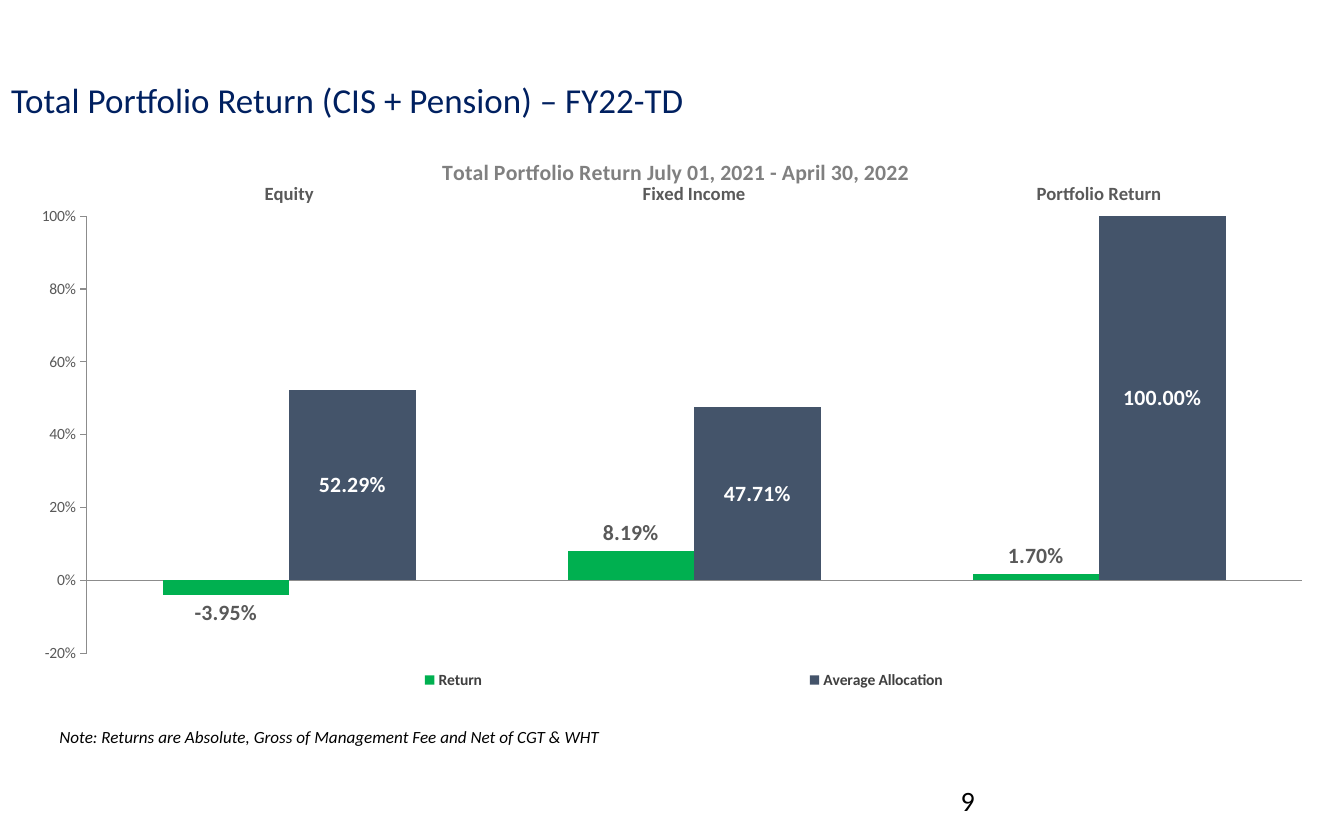
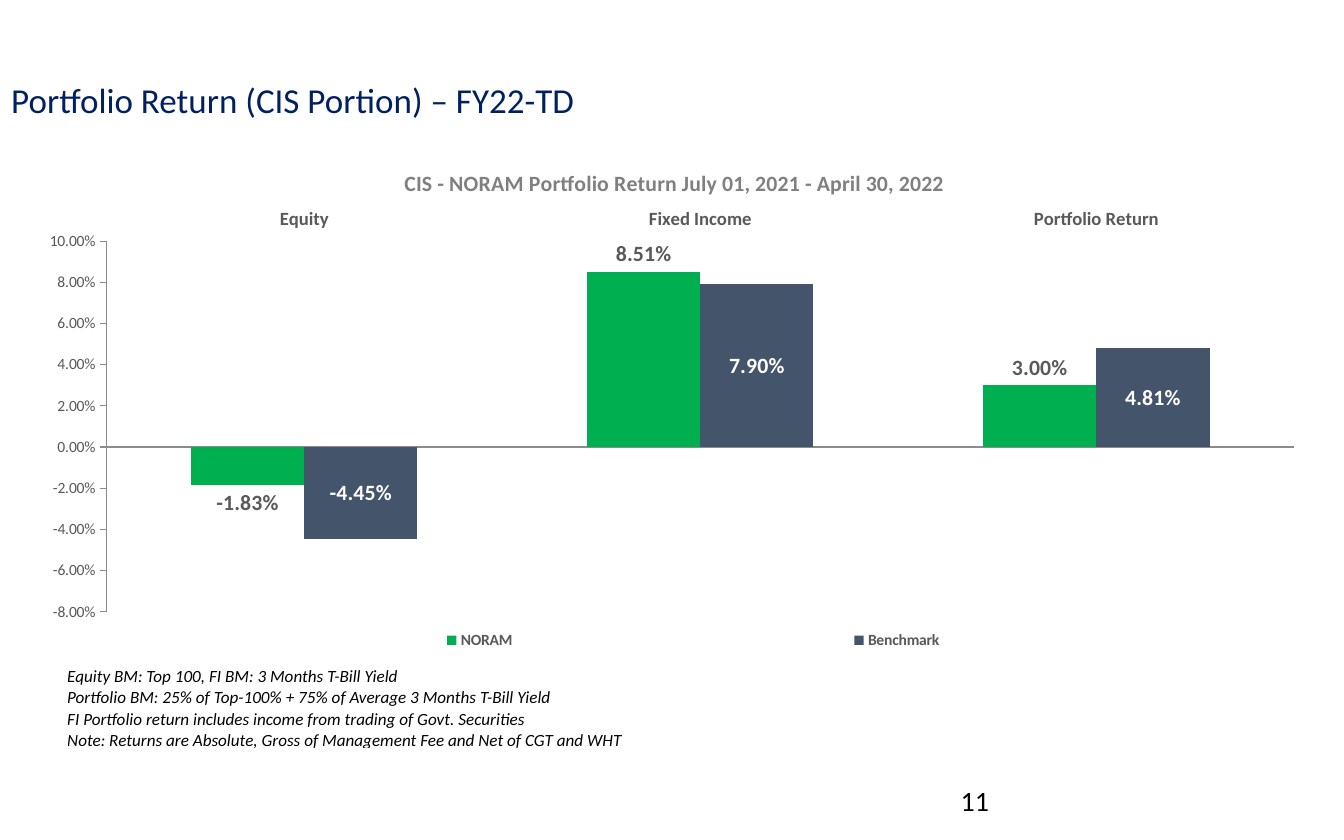
from dataclasses import dataclass
from typing import NamedTuple

from lxml.etree import SubElement
from pptx import Presentation
from pptx.chart.chart import Chart
from pptx.chart.data import CategoryChartData
from pptx.dml.color import RGBColor
from pptx.enum.chart import (XL_CHART_TYPE, XL_LABEL_POSITION, XL_LEGEND_POSITION,
                             XL_TICK_LABEL_POSITION, XL_TICK_MARK)
from pptx.enum.text import MSO_ANCHOR, MSO_AUTO_SIZE, PP_ALIGN
from pptx.oxml.ns import qn
from pptx.slide import Slide
from pptx.util import Emu, Pt

# Shared style: 100 px to the inch
PX = 9144
FONT = "Calibri"
COLORS = {
    "title": "002060",
    "text": "000000",
    "chart_title": "808080",
    "label": "595959",
    "legend": "404040",
    "axis": "8C8C8C",
    "return": "00B050",
    "comparison": "44546A",
    "inside": "FFFFFF",
}
CATEGORIES = ("Equity", "Fixed Income", "Portfolio Return")


class Box(NamedTuple):
    left: int
    top: int
    width: int
    height: int

    def emu(self) -> list[Emu]:
        return [Emu(length * PX) for length in self]


class Layout(NamedTuple):
    """Place inside a chart, as fractions of its size."""
    x: float
    y: float
    w: float | None = None
    h: float | None = None


class Scale(NamedTuple):
    low: float
    high: float
    step: float
    number_format: str


@dataclass
class ReturnSlide:
    title: str
    number: str
    chart_title: str
    chart_box: Box
    scale: Scale
    gap_width: int
    series: dict[str, tuple[float, ...]]
    base_font: str
    legend_color: str
    title_layout: Layout
    plot_layout: Layout
    legend_layout: Layout
    remarks: tuple[str, ...]
    remarks_box: Box


TITLE_BOX = Box(1, 62, 900, 54)
NUMBER_BOX = Box(848, 695, 270, 40)

SLIDES = (
    ReturnSlide(
        title="Total Portfolio Return (CIS + Pension) – FY22-TD",
        number="9",
        chart_title="Total Portfolio Return July 01, 2021 - April 30, 2022",
        chart_box=Box(22, 116, 1154, 517),
        scale=Scale(-0.2, 1, 0.2, "0%"),
        gap_width=120,
        series={"Return": (-0.0395, 0.0819, 0.017),
                "Average Allocation": (0.5229, 0.4771, 1)},
        base_font="Manrope",
        legend_color="legend",
        title_layout=Layout(0.32, 0.04),
        plot_layout=Layout(0.048, 0.149, 0.94, 0.755),
        legend_layout=Layout(0.06, 0.92, 0.9, 0.06),
        remarks=("Note: Returns are Absolute, Gross of Management Fee and Net of CGT & WHT",),
        remarks_box=Box(53, 645, 488, 23),
    ),
    ReturnSlide(
        title="Portfolio Return (CIS Portion) – FY22-TD",
        number="11",
        chart_title="CIS - NORAM Portfolio Return July 01, 2021 - April 30, 2022",
        chart_box=Box(22, 128, 1157, 467),
        scale=Scale(-0.08, 0.1, 0.02, "0.00%"),
        gap_width=150,
        series={"NORAM": (-0.0183, 0.0851, 0.03),
                "Benchmark": (-0.0445, 0.079, 0.0481)},
        base_font=FONT,
        legend_color="label",
        title_layout=Layout(0.29, 0.04),
        plot_layout=Layout(0.063, 0.187, 0.917, 0.709),
        legend_layout=Layout(0.066, 0.92, 0.9, 0.06),
        remarks=("Equity BM: Top 100, FI BM: 3 Months T-Bill Yield",
                 "Portfolio BM: 25% of Top-100% + 75% of Average 3 Months T-Bill Yield",
                 "FI Portfolio return includes income from trading of Govt. Securities",
                 "Note: Returns are Absolute, Gross of Management Fee and Net of CGT and WHT"),
        remarks_box=Box(60, 595, 570, 73),
    ),
)


def color(name: str) -> RGBColor:
    return RGBColor.from_string(COLORS[name])


def style_font(font, size: float, color_name: str, bold: bool = False,
               italic: bool = False, name: str = FONT) -> None:
    font.name = name
    font.size = Pt(size)
    font.bold = bold
    font.italic = italic
    font.color.rgb = color(color_name)


def set_layout(parent, index: int, layout: Layout, inner: bool = False) -> None:
    """Give a chart part a fixed place; index is where its layout element belongs."""
    for old in parent.findall(qn("c:layout")):
        parent.remove(old)
    element = SubElement(parent, qn("c:layout"))
    parent.insert(index, element)
    manual = SubElement(element, qn("c:manualLayout"))
    if inner:
        SubElement(manual, qn("c:layoutTarget")).set("val", "inner")
    for mode in ("xMode", "yMode"):
        SubElement(manual, qn(f"c:{mode}")).set("val", "edge")
    for side, value in layout._asdict().items():
        if value is not None:
            SubElement(manual, qn(f"c:{side}")).set("val", str(value))


def add_title(page: Slide, text: str) -> None:
    title = page.shapes.title
    title.left, title.top, title.width, title.height = TITLE_BOX.emu()
    frame = title.text_frame
    frame.text = text
    frame.word_wrap = True
    frame.auto_size = MSO_AUTO_SIZE.NONE
    frame.vertical_anchor = MSO_ANCHOR.MIDDLE
    frame.margin_left = frame.margin_right = Emu(9 * PX)
    frame.margin_top = frame.margin_bottom = Emu(4 * PX)
    para = frame.paragraphs[0]
    para.alignment = PP_ALIGN.LEFT
    style_font(para.runs[0].font, 22.5, "title")


def add_page_number(page: Slide, number: str) -> None:
    frame = page.shapes.add_textbox(*NUMBER_BOX.emu()).text_frame
    frame.word_wrap = True
    frame.text = number
    style_font(frame.paragraphs[0].runs[0].font, 18, "text")


def add_remarks_table(page: Slide, remarks: tuple[str, ...], box: Box) -> None:
    table = page.shapes.add_table(1, 1, *box.emu()).table
    table.first_row = table.horz_banding = False
    cell = table.cell(0, 0)
    cell.fill.background()
    cell.vertical_anchor = MSO_ANCHOR.BOTTOM
    cell.margin_left = cell.margin_right = cell.margin_top = cell.margin_bottom = 0
    cell.text_frame.text = "\n".join(remarks)
    for para in cell.text_frame.paragraphs:
        style_font(para.runs[0].font, 11, "text", italic=True)


def style_axes(chart: Chart, scale: Scale) -> None:
    values, categories = chart.value_axis, chart.category_axis
    values.minimum_scale, values.maximum_scale = scale.low, scale.high
    values.major_unit = scale.step
    values.tick_labels.number_format = scale.number_format
    values.tick_labels.number_format_is_linked = False
    for axis, size, bold, mark, position in (
            (values, 10, False, XL_TICK_MARK.OUTSIDE, XL_TICK_LABEL_POSITION.LOW),
            (categories, 12, True, XL_TICK_MARK.NONE, XL_TICK_LABEL_POSITION.HIGH)):
        axis.has_major_gridlines = False
        axis.major_tick_mark = mark
        axis.minor_tick_mark = XL_TICK_MARK.NONE
        axis.tick_label_position = position
        axis.format.line.color.rgb = color("axis")
        axis.format.line.width = Pt(0.75)
        style_font(axis.tick_labels.font, size, "label", bold)


def style_series(chart: Chart) -> None:
    looks = (("return", "label", XL_LABEL_POSITION.OUTSIDE_END),
             ("comparison", "inside", XL_LABEL_POSITION.CENTER))
    for series, (fill, label_color, position) in zip(chart.plots[0].series, looks):
        series.invert_if_negative = False
        series.format.fill.solid()
        series.format.fill.fore_color.rgb = color(fill)
        labels = series.data_labels
        labels.show_value = True
        labels.number_format = "0.00%"
        labels.number_format_is_linked = False
        labels.position = position
        style_font(labels.font, 14, label_color, bold=True)


def add_return_chart(page: Slide, content: ReturnSlide) -> None:
    data = CategoryChartData()
    data.categories = CATEGORIES
    for name, values in content.series.items():
        data.add_series(name, values)
    chart = page.shapes.add_chart(XL_CHART_TYPE.COLUMN_CLUSTERED,
                                  *content.chart_box.emu(), data).chart
    style_font(chart.font, 10, "label", name=content.base_font)
    plot = chart.plots[0]
    plot.vary_by_categories = False
    plot.gap_width = content.gap_width
    plot.overlap = 0
    style_axes(chart, content.scale)
    style_series(chart)

    # Chart title and legend
    chart.has_title = True
    title_frame = chart.chart_title.text_frame
    title_frame.text = content.chart_title
    style_font(title_frame.paragraphs[0].runs[0].font, 14, "chart_title", bold=True)
    chart.has_legend = True
    legend = chart.legend
    legend.position = XL_LEGEND_POSITION.BOTTOM
    legend.include_in_layout = False
    style_font(legend.font, 10, content.legend_color, bold=True)

    # Fixed places of the chart parts
    root = chart.element
    set_layout(root.find(f".//{qn('c:title')}"), 1, content.title_layout)
    set_layout(root.find(f".//{qn('c:plotArea')}"), 0, content.plot_layout, inner=True)
    set_layout(root.find(f".//{qn('c:legend')}"), 1, content.legend_layout)


def main() -> None:
    deck = Presentation()
    deck.slide_width, deck.slide_height = Emu(1200 * PX), Emu(750 * PX)
    title_only = deck.slide_layouts[5]
    for content in SLIDES:
        page = deck.slides.add_slide(title_only)
        add_page_number(page, content.number)
        add_title(page, content.title)
        add_remarks_table(page, content.remarks, content.remarks_box)
        add_return_chart(page, content)
    deck.save("out.pptx")


if __name__ == "__main__":
    main()
